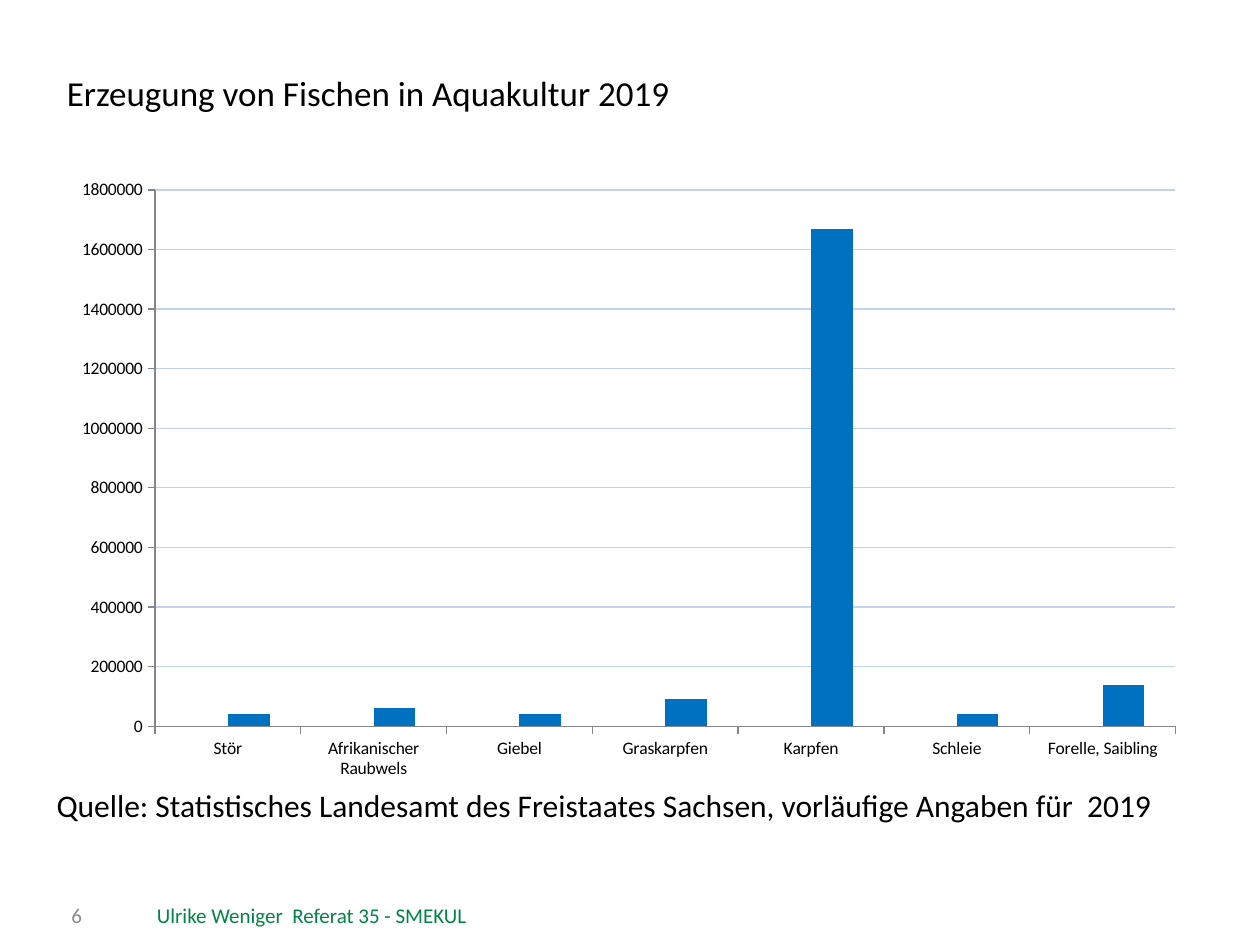
from lxml import etree
from pptx import Presentation
from pptx import util as u
from pptx.chart.data import CategoryChartData
from pptx.dml.color import RGBColor
from pptx.enum import chart as c
from pptx.enum import text
from pptx.oxml.ns import qn

COLORS = {
    "text": "000000",
    "footer": "008444",
    "number": "8C8C8C",
    "axis": "868686",
    "grid": "C2D1ED",
    "empty": "4F81BD",
    "bars": "0070C0",
}
FISH = {
    "Stör": 40000,
    "Afrikanischer Raubwels": 60000,
    "Giebel": 40000,
    "Graskarpfen": 90000,
    "Karpfen": 1670000,
    "Schleie": 40000,
    "Forelle, Saibling": 140000,
}


class SlideBuilder:
    font_name = "Calibri"

    def __init__(self, presentation):
        self.slide = presentation.slides.add_slide(presentation.slide_layouts[5])

    def color(self, name):
        return RGBColor.from_string(COLORS[name])

    def style_font(self, font, size, color):
        font.name = self.font_name
        font.size = u.Pt(size)
        font.color.rgb = self.color(color)

    def fill_text(self, shape, words, size, color, align, anchor):
        frame = shape.text_frame
        frame.word_wrap = True
        frame.auto_size = text.MSO_AUTO_SIZE.NONE
        frame.vertical_anchor = anchor
        paragraph = frame.paragraphs[0]
        paragraph.alignment = align
        run = paragraph.add_run()
        run.text = words
        self.style_font(run.font, size, color)

    def title(self, box, words, size):
        shape = self.slide.shapes.title
        shape.left, shape.top, shape.width, shape.height = map(u.Inches, box)
        self.fill_text(shape, words, size, "text",
                       text.PP_ALIGN.LEFT, text.MSO_ANCHOR.TOP)

    def label(self, box, words, size, color, align=text.PP_ALIGN.LEFT,
              anchor=text.MSO_ANCHOR.MIDDLE):
        shape = self.slide.shapes.add_textbox(*map(u.Inches, box))
        self.fill_text(shape, words, size, color, align, anchor)

    def place_plot(self, chart, **fractions):
        plot_area = chart.plots[0]._element.getparent()
        for old in plot_area.findall(qn("c:layout")):
            plot_area.remove(old)
        layout = etree.Element(qn("c:layout"))
        plot_area.insert(0, layout)
        manual = etree.SubElement(layout, qn("c:manualLayout"))
        settings = {"layoutTarget": "inner", "xMode": "edge", "yMode": "edge"}
        for tag, value in {**settings, **fractions}.items():
            etree.SubElement(manual, qn(f"c:{tag}"), val=str(value))

    def column_chart(self, box, categories, series, size):
        data = CategoryChartData()
        data.categories = categories
        for name, values, _ in series:
            data.add_series(name, values)
        chart = self.slide.shapes.add_chart(
            c.XL_CHART_TYPE.COLUMN_CLUSTERED, *map(u.Inches, box), data).chart
        chart.has_legend = False
        chart.has_title = False
        self.style_font(chart.font, size, "text")

        plot = chart.plots[0]
        plot.gap_width = 150
        plot.overlap = 0
        plot.vary_by_categories = False
        for column, (_, _, color) in zip(plot.series, series):
            column.format.fill.solid()
            column.format.fill.fore_color.rgb = self.color(color)

        for axis in (chart.category_axis, chart.value_axis):
            axis.major_tick_mark = c.XL_TICK_MARK.OUTSIDE
            axis.format.line.color.rgb = self.color("axis")
            axis.format.line.width = u.Pt(0.75)
        axis = chart.value_axis
        axis.minimum_scale = 0
        axis.maximum_scale = 1800000
        axis.major_unit = 200000
        axis.has_major_gridlines = True
        axis.major_gridlines.format.line.color.rgb = self.color("grid")
        axis.major_gridlines.format.line.width = u.Pt(0.75)
        self.place_plot(chart, x=0.08, y=0.04, w=0.9, h=0.86)


def main():
    presentation = Presentation()
    presentation.slide_width = u.Inches(10)
    presentation.slide_height = u.Inches(7.5)
    builder = SlideBuilder(presentation)

    builder.title((0.43, 0.52, 9, 0.61),
                  "Erzeugung von Fischen in Aquakultur 2019", 20)
    builder.label((0.89, 7.06, 3.17, 0.4), "Ulrike Weniger  Referat 35 - SMEKUL",
                  12, "footer", text.PP_ALIGN.CENTER)
    builder.label((0.07, 7.06, 0.68, 0.4), "6", 12, "number", text.PP_ALIGN.RIGHT)
    builder.column_chart(
        (0.51, 1.31, 9, 4.95), list(FISH),
        [("Series 1", [None] * len(FISH), "empty"),
         ("Series 2", list(FISH.values()), "bars")], 10)
    builder.label(
        (0.35, 6.19, 9.21, 0.4),
        "Quelle: Statistisches Landesamt des Freistaates Sachsen, "
        "vorläufige Angaben für  2019",
        18, "text", anchor=text.MSO_ANCHOR.TOP)
    presentation.save("out.pptx")


if __name__ == "__main__":
    main()
